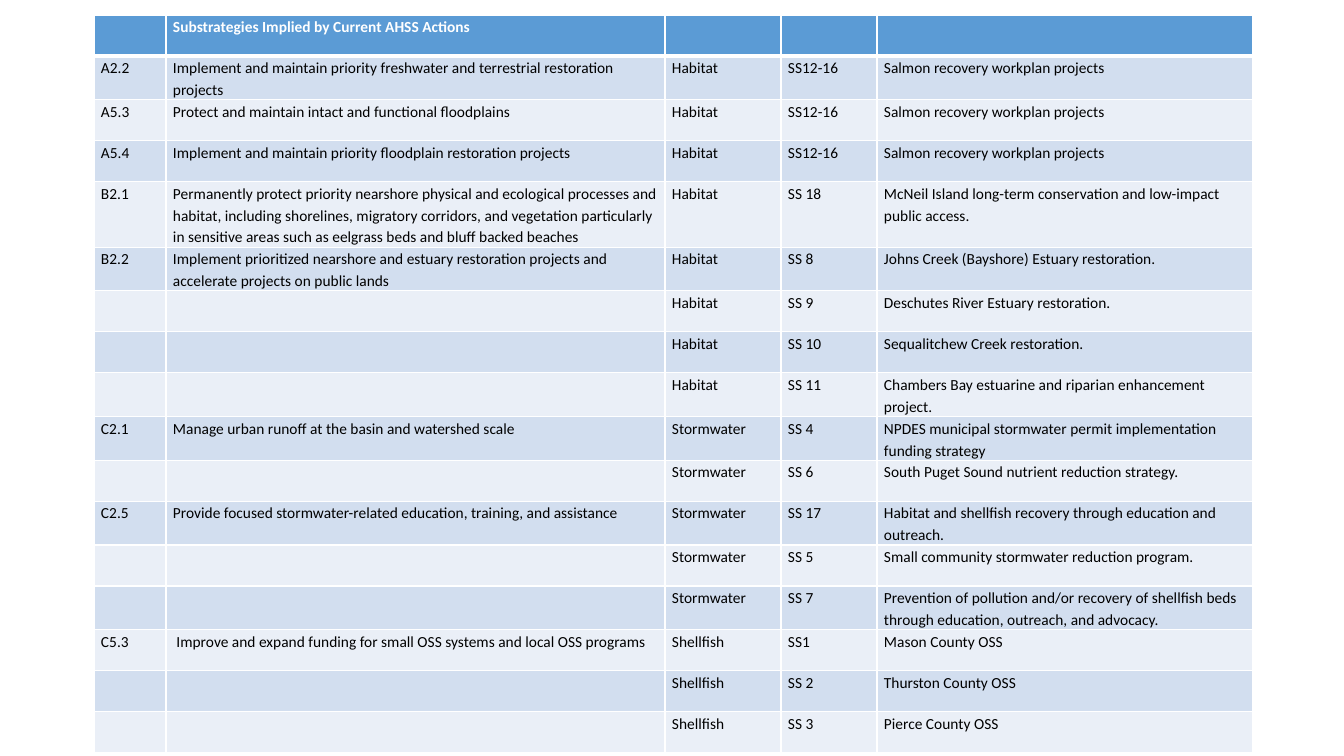
from dataclasses import dataclass

from lxml.etree import SubElement
from pptx import Presentation
from pptx.dml.color import RGBColor as Color
from pptx.oxml.ns import qn
from pptx.util import Emu, Pt

PX_PER_INCH = 100.8
SLIDE_SIZE = (1344, 756)
TABLE_BOX = (94, 15, 1159, 697)
COLUMN_WIDTHS = (72, 499, 116, 96, 376)
CELL_INSET = 7


@dataclass(frozen=True)
class Theme:
    font: str = "Calibri"
    text_size: int = 11
    line_spacing: float = 1.15
    header_fill: str = "5B9BD5"
    header_text: str = "FFFFFF"
    body_fills: tuple = ("D2DEEF", "EAEFF7")
    body_text: str = "000000"
    border: str = "FFFFFF"
    thin: int = 1
    thick: int = 3


THEME = Theme()

HEADER = ("", "Substrategies Implied by Current AHSS Actions", "", "", "")

SUBSTRATEGIES = [
    ("A2.2", "Implement and maintain priority freshwater and terrestrial restoration projects", "Habitat",
     [("SS12-16", "Salmon recovery workplan projects")]),
    ("A5.3", "Protect and maintain intact and functional floodplains", "Habitat",
     [("SS12-16", "Salmon recovery workplan projects")]),
    ("A5.4", "Implement and maintain priority floodplain restoration projects", "Habitat",
     [("SS12-16", "Salmon recovery workplan projects")]),
    ("B2.1", "Permanently protect priority nearshore physical and ecological processes and habitat, "
             "including shorelines, migratory corridors, and vegetation particularly in sensitive areas "
             "such as eelgrass beds and bluff backed beaches", "Habitat",
     [("SS 18", "McNeil Island long-term conservation and low-impact public access.")]),
    ("B2.2", "Implement prioritized nearshore and estuary restoration projects and accelerate projects "
             "on public lands", "Habitat",
     [("SS 8", "Johns Creek (Bayshore) Estuary restoration."),
      ("SS 9", "Deschutes River Estuary restoration."),
      ("SS 10", "Sequalitchew Creek restoration."),
      ("SS 11", "Chambers Bay estuarine and riparian enhancement project.")]),
    ("C2.1", "Manage urban runoff at the basin and watershed scale", "Stormwater",
     [("SS 4", "NPDES municipal stormwater permit implementation funding strategy"),
      ("SS 6", "South Puget Sound nutrient reduction strategy.")]),
    ("C2.5", "Provide focused stormwater-related education, training, and assistance", "Stormwater",
     [("SS 17", "Habitat and shellfish recovery through education and outreach."),
      ("SS 5", "Small community stormwater reduction program."),
      ("SS 7", "Prevention of pollution and/or recovery of shellfish beds through education, "
               "outreach, and advocacy.")]),
    ("C5.3", " Improve and expand funding for small OSS systems and local OSS programs", "Shellfish",
     [("SS1", "Mason County OSS"),
      ("SS 2", "Thurston County OSS"),
      ("SS 3", "Pierce County OSS")]),
]


def px(length):
    return Emu(round(length * 914400 / PX_PER_INCH))


def table_rows():
    rows = [HEADER]
    for code, substrategy, topic, actions in SUBSTRATEGIES:
        for index, action in enumerate(actions):
            lead = (code, substrategy) if index == 0 else ("", "")
            rows.append((*lead, topic, *action))
    return rows


def add_borders(cell, top, bottom):
    properties = cell._tc.get_or_add_tcPr()
    widths = {"a:lnL": THEME.thin, "a:lnR": THEME.thin, "a:lnT": top, "a:lnB": bottom}
    for tag, width in widths.items():
        line = SubElement(properties, qn(tag), w=str(Pt(width)))
        fill = SubElement(line, qn("a:solidFill"))
        SubElement(fill, qn("a:srgbClr"), val=THEME.border)


def write_text(cell, text, color, bold):
    para = cell.text_frame.paragraphs[0]
    para.line_spacing = THEME.line_spacing
    span = para.add_run()
    span.text = text
    span.font.name = THEME.font
    span.font.size = Pt(THEME.text_size)
    span.font.bold = bold
    span.font.color.rgb = Color.from_string(color)


def format_cell(cell, text, row_index):
    is_header = row_index == 0
    top = THEME.thick if row_index == 1 else THEME.thin
    bottom = THEME.thick if is_header else THEME.thin
    add_borders(cell, top, bottom)
    fill = THEME.header_fill if is_header else THEME.body_fills[(row_index - 1) % 2]
    cell.fill.solid()
    cell.fill.fore_color.rgb = Color.from_string(fill)
    cell.margin_left = cell.margin_right = px(CELL_INSET)
    cell.margin_top = cell.margin_bottom = 0
    if text:
        write_text(cell, text, THEME.header_text if is_header else THEME.body_text, is_header)


def add_substrategy_table(page, box):
    rows = table_rows()
    frame = page.shapes.add_table(len(rows), len(COLUMN_WIDTHS), *map(px, box))
    table = frame.table
    for column, width in zip(table.columns, COLUMN_WIDTHS):
        column.width = px(width)
    for row_index, texts in enumerate(rows):
        table.rows[row_index].height = px(box[3] // len(rows))
        for column_index, text in enumerate(texts):
            format_cell(table.cell(row_index, column_index), text, row_index)


def main():
    deck = Presentation()
    deck.slide_width, deck.slide_height = map(px, SLIDE_SIZE)
    page = deck.slides.add_slide(deck.slide_layouts[6])
    add_substrategy_table(page, TABLE_BOX)
    deck.save("out.pptx")


if __name__ == "__main__":
    main()
